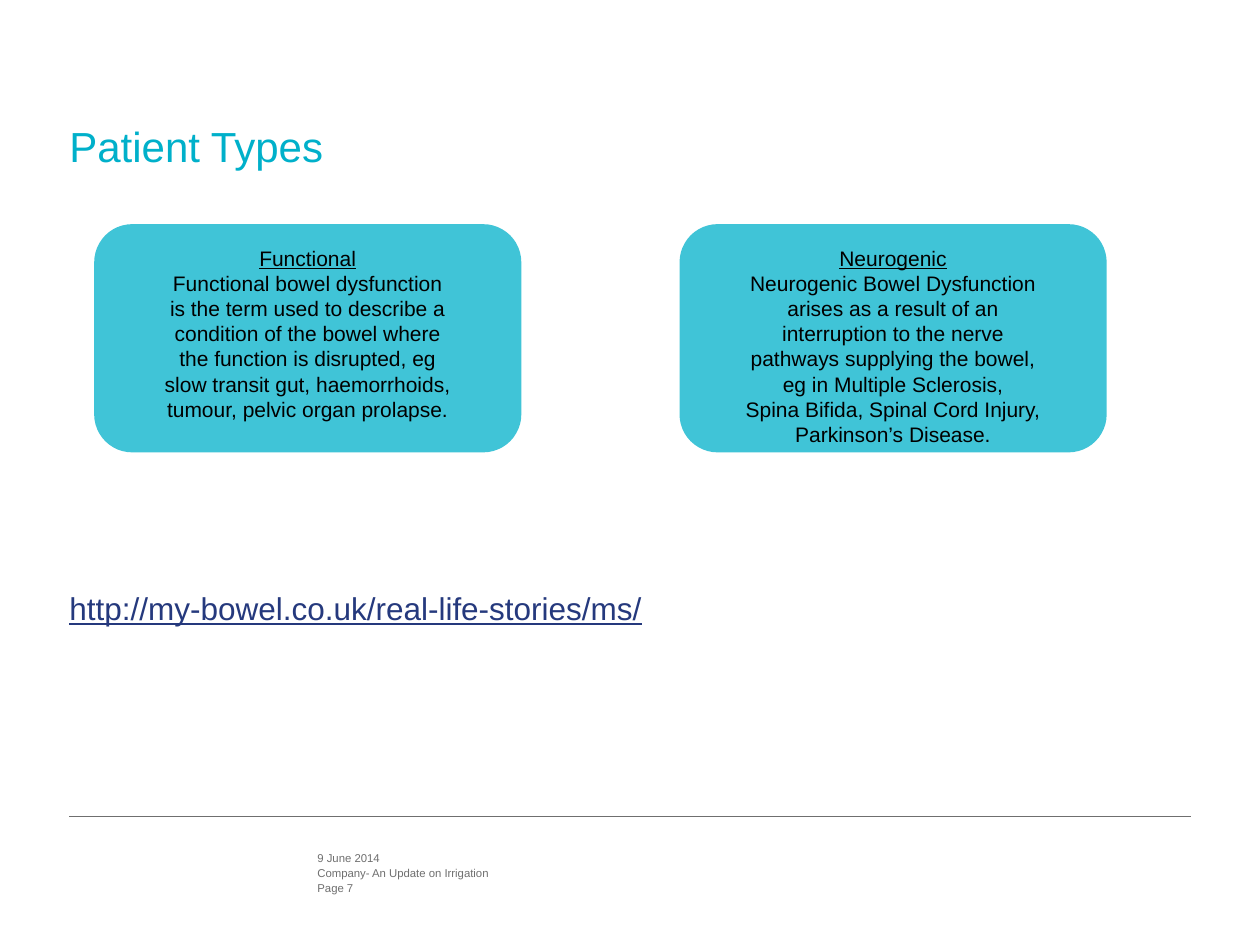
"""Build the Patient Types slide."""
import pptx
import pptx.dml.color
import pptx.enum.shapes
import pptx.enum.text
import pptx.oxml
import pptx.oxml.ns
import pptx.util

Cm = pptx.util.Cm
Pt = pptx.util.Pt
RGBColor = pptx.dml.color.RGBColor
Anchor = pptx.enum.text.MSO_ANCHOR
Align = pptx.enum.text.PP_ALIGN

TEAL = RGBColor(0x00, 0xB0, 0xCA)
AQUA = RGBColor(0x40, 0xC4, 0xD7)
NAVY = RGBColor(0x25, 0x39, 0x7D)
GRAY = RGBColor(0x6F, 0x6F, 0x6F)
BLACK = RGBColor(0x00, 0x00, 0x00)

EDGE = 1.4
WIDTH = 22.6


def style(par, size, color):
    par.font.name = "Arial"
    par.font.size = Pt(size)
    par.font.color.rgb = color


def label(text, left, top, width, height, size, color):
    box = slide.shapes.add_textbox(Cm(left), Cm(top), Cm(width), Cm(height))
    frame = box.text_frame
    frame.word_wrap = True
    frame.margin_left = frame.margin_right = 0
    frame.margin_top = frame.margin_bottom = 0
    frame.text = text
    style(frame.paragraphs[0], size, color)
    return frame


deck = pptx.Presentation()
deck.slide_width = Cm(25.4)
deck.slide_height = Cm(19.05)
slide = deck.slides.add_slide(deck.slide_layouts[6])

rule = slide.shapes.add_connector(
    pptx.enum.shapes.MSO_CONNECTOR.STRAIGHT,
    Cm(EDGE), Cm(16.46), Cm(EDGE + WIDTH), Cm(16.46))
rule.line.color.rgb = GRAY
rule.line.width = Pt(0.5)
props = rule._element.spPr
props.append(pptx.oxml.parse_xml(
    "<a:effectLst %s/>" % pptx.oxml.ns.nsdecls("a")))

footer = ["9 June 2014", "Company- An Update on Irrigation", "Page 7"]
for row, text in enumerate(footer):
    label(text, 6.4, 17.15 + row * 0.31, 8, 0.28, 6.5, GRAY)

title = label("Patient Types", EDGE, 1.7, WIDTH, 1.75, 24, TEAL)
title.vertical_anchor = Anchor.BOTTOM
title.paragraphs[0].line_spacing = 0.85

link = label("http://my-bowel.co.uk/real-life-stories/ms/",
             EDGE, 11.87, WIDTH, 0.8, 18, NAVY)
link.paragraphs[0].font.underline = True

cards = [
    ["Functional",
     "Functional bowel dysfunction",
     "is the term used to describe a",
     "condition of the bowel where",
     "the function is disrupted, eg",
     "slow transit gut, haemorrhoids,",
     "tumour, pelvic organ prolapse."],
    ["Neurogenic",
     "Neurogenic Bowel Dysfunction",
     "arises as a result of an",
     "interruption to the nerve",
     "pathways supplying the bowel,",
     "eg in Multiple Sclerosis,",
     "Spina Bifida, Spinal Cord Injury,",
     "Parkinson’s Disease."],
]
for col, lines in enumerate(cards):
    card = slide.shapes.add_shape(
        pptx.enum.shapes.MSO_SHAPE.ROUNDED_RECTANGLE,
        Cm(1.9 + col * 11.8), Cm(4.52), Cm(8.61), Cm(4.6))
    card.shadow.inherit = False
    card.fill.solid()
    card.fill.fore_color.rgb = AQUA
    card.line.fill.background()
    frame = card.text_frame
    frame.word_wrap = True
    frame.vertical_anchor = Anchor.TOP
    frame.margin_left = frame.margin_right = Cm(0.2)
    frame.margin_top = frame.margin_bottom = Cm(0.2)
    frame.text = "\n".join(lines)
    for par in frame.paragraphs:
        par.alignment = Align.CENTER
        style(par, 12, BLACK)
    frame.paragraphs[0].font.underline = True

deck.save("out.pptx")
